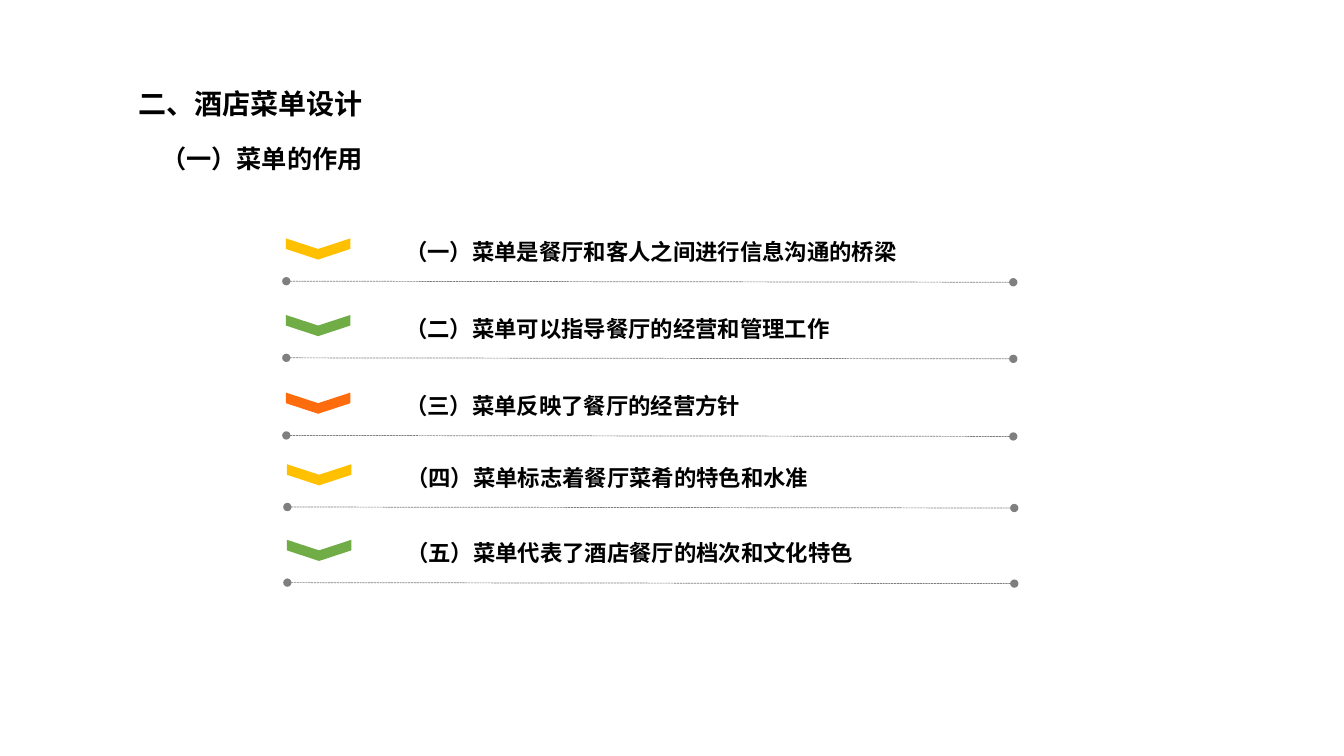
from pptx import Presentation
from pptx.dml.color import RGBColor
from pptx.enum import dml, shapes, text
from pptx.oxml.ns import qn
from pptx.util import Inches, Pt
from lxml import etree

BLACK = RGBColor(0, 0, 0)
GREY = RGBColor(0x7F, 0x7F, 0x7F)
GOLD = RGBColor(0xFF, 0xC0, 0x00)
GREEN = RGBColor(0x70, 0xAD, 0x47)
ORANGE = RGBColor(0xFF, 0x6C, 0x0D)
FONT = "Noto Sans CJK SC"

# left, top, colour, wording
ROLES = [
    (2.84, 2.31, GOLD, "（一）菜单是餐厅和客人之间进行信息沟通的桥梁"),
    (2.84, 3.07, GREEN, "（二）菜单可以指导餐厅的经营和管理工作"),
    (2.84, 3.84, ORANGE, "（三）菜单反映了餐厅的经营方针"),
    (2.85, 4.55, GOLD, "（四）菜单标志着餐厅菜肴的特色和水准"),
    (2.85, 5.3, GREEN, "（五）菜单代表了酒店餐厅的档次和文化特色"),
]


def place(shape, *box):
    for key, val in zip(("left", "top", "width", "height"), box):
        setattr(shape, key, Inches(val))


def write(shape, words, size, align=text.PP_ALIGN.LEFT, pad=(0.1, 0.05), gap=1.0):
    frame = shape.text_frame
    form = dict(
        word_wrap=True, auto_size=text.MSO_AUTO_SIZE.SHAPE_TO_FIT_TEXT,
        vertical_anchor=text.MSO_ANCHOR.TOP,
        margin_left=Inches(pad[0]), margin_right=Inches(pad[0]),
        margin_top=Inches(pad[1]), margin_bottom=Inches(pad[1]))
    for key, val in form.items():
        setattr(frame, key, val)
    para = frame.paragraphs[0]
    para.alignment, para.line_spacing = align, gap
    run = para.add_run()
    run.text = words
    for key, val in dict(name=FONT, size=Pt(size), bold=True).items():
        setattr(run.font, key, val)
    run.font.color.rgb = BLACK
    face = etree.SubElement(run.font._element, qn("a:ea"))
    face.set("typeface", FONT)


def heads(slide, left, top):
    title = slide.shapes.title
    place(title, left, top, 5.83, 0.43)
    write(title, "二、酒店菜单设计", 20)
    sub = slide.shapes.add_textbox(0, 0, 0, 0)
    place(sub, left + 0.23, top + 0.56, 4.95, 0.4)
    write(sub, "（一）菜单的作用", 18)


def rule(group, left, top, width):
    """Draw a dashed line with a round dot at each end."""
    line = group.shapes.add_connector(
        shapes.MSO_CONNECTOR.STRAIGHT, Inches(left), Inches(top),
        Inches(left + width), Inches(top + 0.01))
    line.line.color.rgb = GREY
    line.line.width = Pt(0.5)
    line.line.dash_style = dml.MSO_LINE.SQUARE_DOT
    stroke = line.line._get_or_add_ln()
    for end in ("a:headEnd", "a:tailEnd"):
        etree.SubElement(stroke, qn(end)).set("type", "oval")
    etree.SubElement(line._element.spPr, qn("a:effectLst"))


def role(slide, left, top, color, words):
    group = slide.shapes.add_group_shape()
    mark = group.shapes.add_shape(shapes.MSO_SHAPE.CHEVRON, 0, 0, 0, 0)
    place(mark, left + 0.21, top - 0.16, 0.21, 0.64)
    mark.rotation = 90
    mark.shadow.inherit = False
    mark.fill.solid()
    mark.fill.fore_color.rgb = color
    mark.line.fill.background()
    rule(group, left, top + 0.48, 7.21)
    label = group.shapes.add_textbox(0, 0, 0, 0)
    place(label, left + 1.18, top, 6.77, 0.32)
    write(label, words, 16, text.PP_ALIGN.JUSTIFY, (0, 0), 1.2)


def main():
    deck = Presentation()
    deck.slide_width, deck.slide_height = Inches(13.33), Inches(7.5)
    slide = deck.slides.add_slide(deck.slide_layouts[5])
    heads(slide, 1.27, 0.81)
    for item in ROLES:
        role(slide, *item)
    deck.save("out.pptx")


if __name__ == "__main__":
    main()
